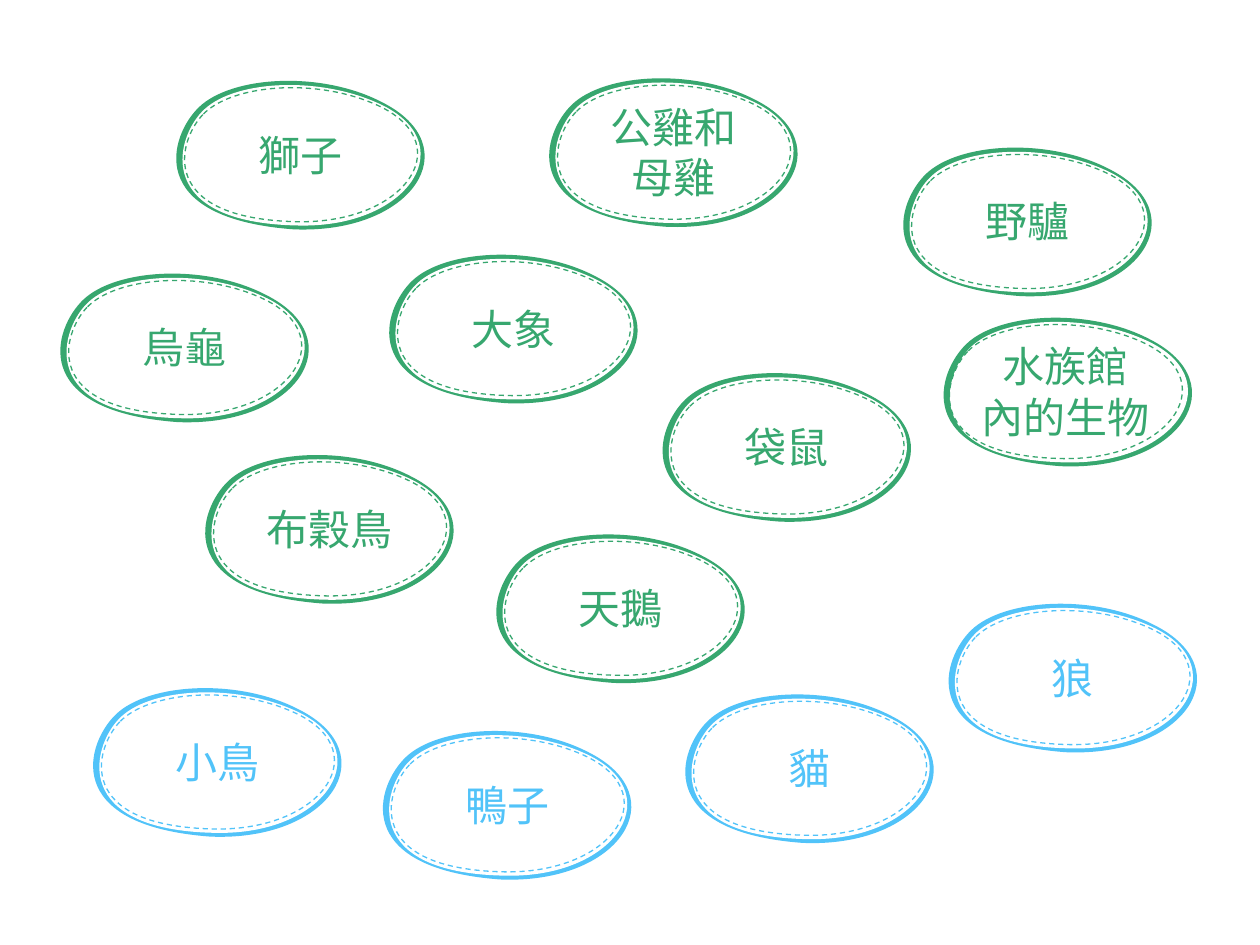
from lxml import etree
from pptx import Presentation
from pptx.dml.color import RGBColor
from pptx.enum.dml import MSO_LINE
from pptx.enum.text import MSO_ANCHOR, PP_ALIGN
from pptx.oxml.ns import qn
from pptx.util import Inches, Pt

DASH = MSO_LINE.DASH
MIDDLE = MSO_ANCHOR.MIDDLE
CENTER = PP_ALIGN.CENTER
FONT = "Noto Sans CJK JP"
COLORS = {"green": "37A76F", "blue": "51C3F9", "white": "FFFFFF"}

# Each outline has a box (left, top, width, height) and nodes, in inches from
# the bubble's corner. The nodes are a start, then three curves of two
# control points and an end point; the last curve ends at the start.
RIM = ((0, 0, 1.97, 1.18),
       [(.18, .21), (-.05, .43), (-.27, 1.09), (.93, 1.18), (1.88, 1.22),
        (2.33, .52), (1.63, .17), (1.15, -.08), (.44, -.04), (.18, .21)])
INSIDE = ((.05, .03, 1.89, 1.12),
          [(.2, .25), (-.01, .47), (-.18, 1.13), (.97, 1.15), (1.87, 1.17),
           (2.29, .47), (1.58, .17), (1.1, -.04), (.43, 0), (.2, .25)])
STITCH = ((.06, .05, 1.85, 1.07),
          [(.21, .27), (.01, .48), (-.16, 1.1), (.97, 1.12), (1.85, 1.13),
           (2.26, .47), (1.56, .18), (1.09, -.02), (.44, .03), (.21, .27)])

# Left, top, colour and lines of each animal bubble, from back to front
ANIMALS = [
    (3.04, 5.8, "blue", ["鴨子"]),
    (.74, 5.46, "blue", ["小鳥"]),
    (5.44, 5.51, "blue", ["貓"]),
    (7.53, 4.79, "blue", ["狼"]),
    (3.94, 4.24, "green", ["天鵝"]),
    (1.63, 3.61, "green", ["布穀鳥"]),
    (7.49, 2.52, "green", ["水族館", "內的生物"]),
    (5.26, 2.96, "green", ["袋鼠"]),
    (3.09, 2.02, "green", ["大象"]),
    (.48, 2.17, "green", ["烏龜"]),
    (7.17, 1.17, "green", ["野驢"]),
    (4.36, .62, "green", ["公雞和", "母雞"]),
    (1.4, .64, "green", ["獅子"]),
]
STITCH_SHIFT = {"水族館": -.02}  # this bubble's stitching sits further left


def rgb(color):
    return RGBColor.from_string(COLORS[color])


def draw_curves(outline, box, nodes):
    """Replace the straight sides of a freeform by Bezier curves."""
    contour = next(outline._element.iter(qn("a:path")))
    for side in list(contour):
        contour.remove(side)
    pieces = [("a:moveTo", nodes[:1])]
    pieces += [("a:cubicBezTo", nodes[i:i + 3]) for i in range(1, len(nodes), 3)]
    for tag, points in pieces:
        piece = etree.SubElement(contour, qn(tag))
        for x, y in points:
            etree.SubElement(piece, qn("a:pt"), x=str(Inches(x - box[0])),
                             y=str(Inches(y - box[1])))
    etree.SubElement(contour, qn("a:close"))


def add_outline(shapes, left, top, form, fill=None, line=None):
    box, nodes = form
    x, y = Inches(left + box[0]), Inches(top + box[1])
    right, bottom = x + Inches(box[2]), y + Inches(box[3])
    builder = shapes.build_freeform(x, y)
    builder.add_line_segments([(right, y), (right, bottom), (x, bottom)], close=True)
    outline = builder.convert_to_shape()
    draw_curves(outline, box, nodes)
    outline.shadow.inherit = False
    if fill:
        outline.fill.solid()
        outline.fill.fore_color.rgb = rgb(fill)
    else:
        outline.fill.background()
    if line:
        outline.line.color.rgb = rgb(line)
        outline.line.width = Pt(.75)
        outline.line.dash_style = DASH
    else:
        outline.line.fill.background()
    return outline


def write_name(outline, lines, color):
    frame = outline.text_frame
    frame_format = {"word_wrap": True, "vertical_anchor": MIDDLE, "margin_left": 0,
                    "margin_right": 0, "margin_top": 0, "margin_bottom": 0}
    for attribute, value in frame_format.items():
        setattr(frame, attribute, value)
    for index, text in enumerate(lines):
        paragraph = frame.add_paragraph() if index else frame.paragraphs[0]
        paragraph.alignment = CENTER
        run = paragraph.add_run()
        run.text = text
        for attribute, value in {"size": Pt(24), "name": FONT}.items():
            setattr(run.font, attribute, value)
        run.font.color.rgb = rgb(color)
        # East Asian typeface for the Chinese text
        properties = run._r.get_or_add_rPr()
        etree.SubElement(properties, qn("a:ea"), typeface=FONT)


def add_bubble(slide, left, top, color, lines):
    shapes = slide.shapes.add_group_shape().shapes
    # Uneven rim: a coloured shape with a white one on top
    add_outline(shapes, left, top, RIM, fill=color)
    add_outline(shapes, left, top, INSIDE, fill="white")
    # Dashed stitching, which carries the name
    shift = STITCH_SHIFT.get(lines[0], 0)
    stitching = add_outline(shapes, left + shift, top, STITCH, line=color)
    write_name(stitching, lines, color)


def main():
    deck = Presentation()
    deck.slide_width, deck.slide_height = Inches(10), Inches(7.5)
    slide = deck.slides.add_slide(deck.slide_layouts[6])
    for animal in ANIMALS:
        add_bubble(slide, *animal)
    deck.save("out.pptx")


if __name__ == "__main__":
    main()
